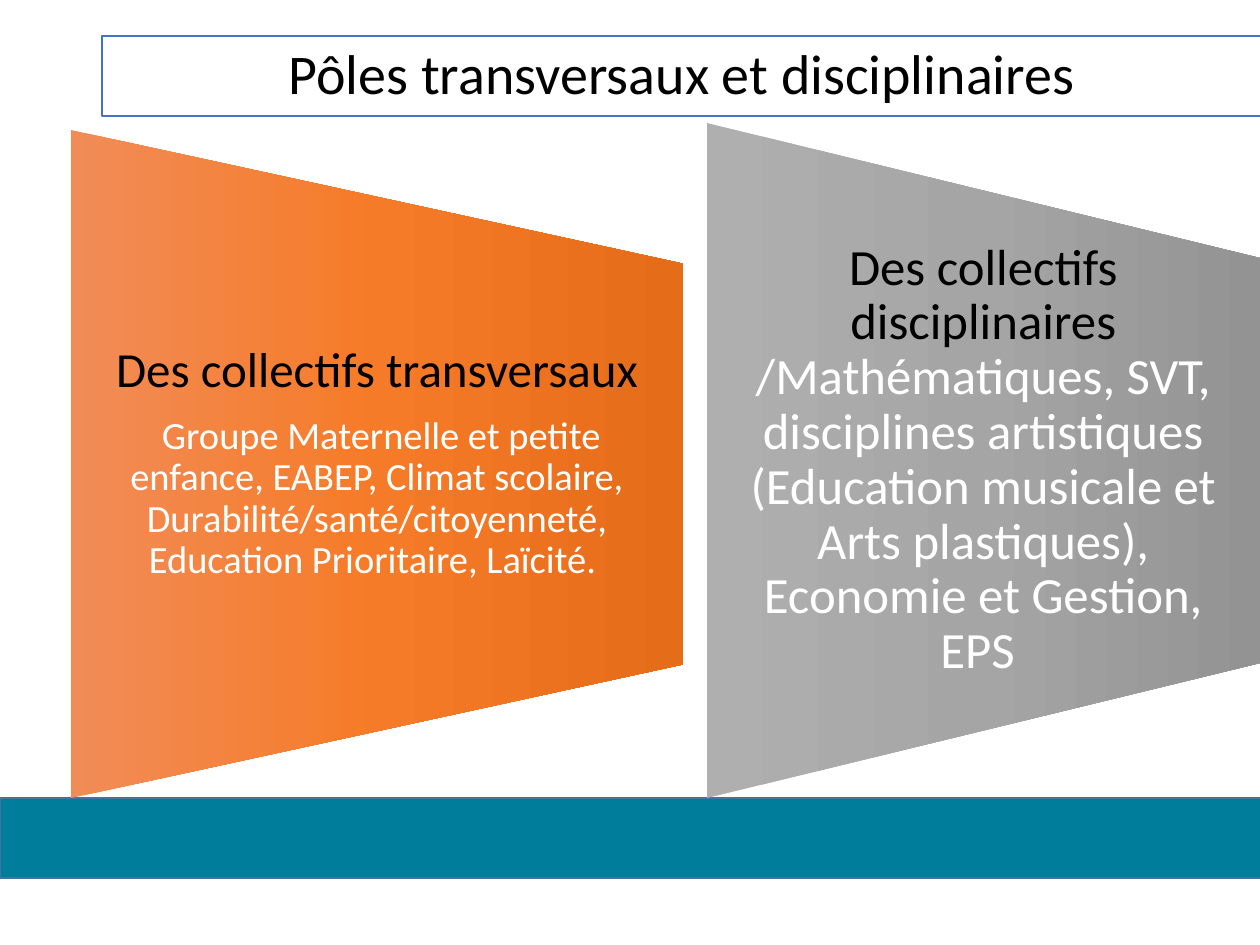
"""Build the slide of cross-disciplinary and subject groups."""
import copy
import dataclasses
import typing

import pptx
import pptx.dml.color
import pptx.enum.shapes
import pptx.enum.text
import pptx.shapes.autoshape
import pptx.slide
import pptx.text.text
import pptx.util

RGBColor = pptx.dml.color.RGBColor
BLACK = RGBColor(0x00, 0x00, 0x00)
WHITE = RGBColor(0xFF, 0xFF, 0xFF)
TEAL = RGBColor(0x00, 0x7D, 0x9B)
BAND_EDGE = RGBColor(0x43, 0x73, 0x9E)
TITLE_EDGE = RGBColor(0x44, 0x72, 0xC4)
ORANGES = (RGBColor(0xF1, 0x8C, 0x57), RGBColor(0xF6, 0x7B, 0x28), RGBColor(0xE5, 0x6C, 0x19))
GREYS = (RGBColor(0xAF, 0xAF, 0xAF), RGBColor(0xA5, 0xA5, 0xA5), RGBColor(0x93, 0x93, 0x93))
FONT = "Calibri"
EMU_PER_PX = 914400 / 126


class Span(typing.NamedTuple):
    text: str
    size: int
    color: RGBColor


@dataclasses.dataclass
class Panel:
    left: int
    top: int
    width: int
    height: int
    inset: int
    colors: tuple[RGBColor, ...]
    paragraphs: list[list[Span]]


PANELS = [
    Panel(71, 130, 612, 668, 24, ORANGES, [
        [Span("Des collectifs transversaux", 28, BLACK)],
        [Span(" Groupe Maternelle et petite enfance, EABEP, Climat scolaire, "
              "Durabilité/santé/citoyenneté, Education Prioritaire, Laïcité. ", 22, WHITE)],
    ]),
    Panel(707, 123, 553, 675, 25, GREYS, [
        [Span("Des collectifs disciplinaires ", 29, BLACK),
         Span("/Mathématiques, SVT, disciplines artistiques (Education musicale et "
              "Arts plastiques), Economie et Gestion, EPS ", 29, WHITE)],
    ]),
]


def px(length: float) -> pptx.util.Emu:
    """Turn pixels into EMU."""
    return pptx.util.Emu(round(length * EMU_PER_PX))


def format_span(span: pptx.text.text._Run, size: int, color: RGBColor) -> None:
    """Set the font of one run."""
    span.font.name = FONT
    span.font.size = pptx.util.Pt(size)
    span.font.color.rgb = color


def format_para(para: pptx.text.text._Paragraph) -> None:
    """Centre a paragraph and tighten its lines."""
    para.alignment = pptx.enum.text.PP_ALIGN.CENTER
    para.line_spacing = 0.9


def paint_box(box: pptx.shapes.autoshape.Shape, fill: RGBColor, edge: RGBColor) -> None:
    """Give a box a plain fill and a thin edge."""
    box.fill.solid()
    box.fill.fore_color.rgb = fill
    box.line.color.rgb = edge
    box.line.width = pptx.util.Pt(1)


def paint_gradient(shape: pptx.shapes.autoshape.Shape, colors: tuple[RGBColor, ...]) -> None:
    """Fill a shape with three evenly spaced colours from its top down."""
    shape.fill.gradient()
    shape.fill.gradient_angle = 270
    first = shape._element.xpath(".//a:gs")[0]
    first.addnext(copy.deepcopy(first))
    for index, (stop, color) in enumerate(zip(shape.fill.gradient_stops, colors)):
        stop.position = index / 2
        stop.color.rgb = color


def draw_band(page: pptx.slide.Slide) -> None:
    """Draw the band across the foot of the page."""
    band = page.shapes.add_shape(pptx.enum.shapes.MSO_SHAPE.RECTANGLE,
                                 px(0), px(798), px(1261), px(80))
    band.shadow.inherit = False
    paint_box(band, TEAL, BAND_EDGE)


def draw_title(page: pptx.slide.Slide, text: str) -> None:
    """Place and format the title."""
    title = page.shapes.title
    title.left, title.top, title.width, title.height = px(102), px(36), px(1160), px(80)
    paint_box(title, WHITE, TITLE_EDGE)
    frame = title.text_frame
    frame.text = text
    frame.auto_size = pptx.enum.text.MSO_AUTO_SIZE.NONE
    frame.vertical_anchor = pptx.enum.text.MSO_ANCHOR.MIDDLE
    para = frame.paragraphs[0]
    format_para(para)
    format_span(para.runs[0], 32, BLACK)


def draw_panel(page: pptx.slide.Slide, panel: Panel) -> None:
    """Draw a trapezoid narrowing to the right, with its text in the middle."""
    group = page.shapes.add_group_shape()
    shift = (panel.width - panel.height) / 2
    trapezoid = group.shapes.add_shape(
        pptx.enum.shapes.MSO_SHAPE.FLOWCHART_MANUAL_OPERATION,
        px(panel.left + shift), px(panel.top - shift), px(panel.height), px(panel.width))
    trapezoid.rotation = 270
    trapezoid.shadow.inherit = False
    trapezoid.line.fill.background()
    paint_gradient(trapezoid, panel.colors)

    box = group.shapes.add_textbox(px(panel.left), px(panel.top + panel.height / 5),
                                   px(panel.width), px(panel.height * 3 / 5))
    frame = box.text_frame
    frame.word_wrap = True
    frame.vertical_anchor = pptx.enum.text.MSO_ANCHOR.MIDDLE
    frame.margin_left = frame.margin_right = px(panel.inset)
    frame.margin_top = frame.margin_bottom = 0
    for index, spans in enumerate(panel.paragraphs):
        para = frame.add_paragraph() if index else frame.paragraphs[0]
        format_para(para)
        para.space_after = pptx.util.Pt(round(spans[0].size * 0.35))
        for span in spans:
            run = para.add_run()
            run.text = span.text
            format_span(run, span.size, span.color)


def main() -> None:
    """Build and save the deck."""
    deck = pptx.Presentation()
    deck.slide_width, deck.slide_height = px(1260), px(945)
    page = deck.slides.add_slide(deck.slide_layouts[5])
    draw_band(page)
    draw_title(page, "Pôles transversaux et disciplinaires")
    for panel in PANELS:
        draw_panel(page, panel)
    deck.save("out.pptx")


if __name__ == "__main__":
    main()
